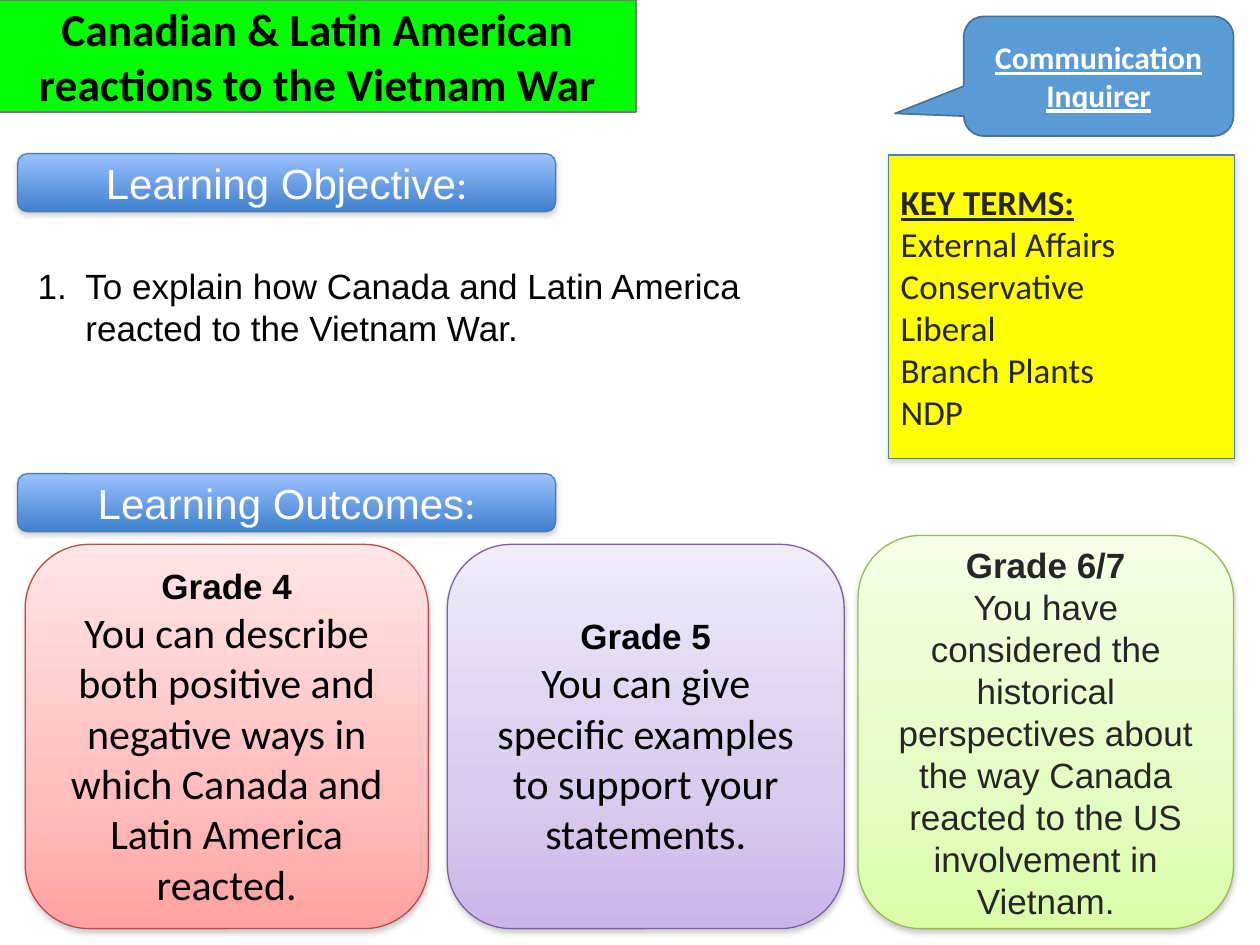
from copy import deepcopy

from lxml.etree import SubElement
from pptx import Presentation
from pptx.dml.color import RGBColor
from pptx.enum.shapes import MSO_SHAPE
from pptx.enum.text import MSO_ANCHOR, MSO_AUTO_SIZE, PP_ALIGN
from pptx.oxml.ns import qn
from pptx.util import Emu, Pt

PX = 9144  # 100 px to the inch

BLACK = RGBColor(0x00, 0x00, 0x00)
WHITE = RGBColor(0xFF, 0xFF, 0xFF)
DARK = RGBColor(0x26, 0x26, 0x26)
GRAY = RGBColor(0x7A, 0x7A, 0x7A)
GREEN = RGBColor(0x00, 0xFF, 0x00)
YELLOW = RGBColor(0xFF, 0xFF, 0x00)
EDGE = RGBColor(0x4A, 0x7E, 0xBB)
SKY = RGBColor(0x5B, 0x9B, 0xD5)
NAVY = RGBColor(0x43, 0x73, 0x9E)
BLUES = [(0, RGBColor(0x9B, 0xC1, 0xFF)), (1, RGBColor(0x3F, 0x80, 0xCD))]
REDS = [(0, RGBColor(0xFF, 0xE5, 0xE5)), (0.65, RGBColor(0xFF, 0xBE, 0xBD)),
        (1, RGBColor(0xFF, 0xA2, 0xA1))]
PURPLES = [(0, RGBColor(0xF0, 0xEA, 0xF9)), (0.65, RGBColor(0xD9, 0xCB, 0xEE)),
           (1, RGBColor(0xC9, 0xB5, 0xE8))]
LIMES = [(0, RGBColor(0xF5, 0xFF, 0xE6)), (0.65, RGBColor(0xE4, 0xFD, 0xC2)),
         (1, RGBColor(0xDA, 0xFD, 0xA7))]
RED_EDGE = RGBColor(0xBE, 0x4B, 0x48)
PURPLE_EDGE = RGBColor(0x7D, 0x60, 0xA0)
LIME_EDGE = RGBColor(0x98, 0xB9, 0x54)


def scale(box):
    return [Emu(n * PX) for n in box]


def paint(shape, fill, edge, width=0.75):
    """Fill with one colour or a list of (place, colour) stops."""
    if isinstance(fill, list):
        shape.fill.gradient()
        shape.fill.gradient_angle = 270
        stops = shape.fill._fill._gradFill.gsLst
        for _ in fill[2:]:
            stops.append(deepcopy(stops[0]))
        for stop, (place, color) in zip(shape.fill.gradient_stops, fill):
            stop.position = place
            stop.color.rgb = color
    else:
        shape.fill.solid()
        shape.fill.fore_color.rgb = fill
    shape.line.color.rgb = edge
    shape.line.width = Pt(width)


def shade(shape, alpha, drop):
    """Cast a soft gray shadow straight down."""
    shape.shadow.inherit = False
    effects = shape._element.spPr.find(qn("a:effectLst"))
    outer = SubElement(effects, qn("a:outerShdw"), blurRad=str(Pt(3.1)),
                       dist=str(Pt(drop)), dir="5400000", rotWithShape="0")
    color = SubElement(outer, qn("a:srgbClr"), val="808080")
    SubElement(color, qn("a:alpha"), val=str(alpha * 1000))


def add_box(slide, kind, box, fill, edge, width=0.75):
    shape = slide.shapes.add_shape(kind, *scale(box))
    shape.shadow.inherit = False
    paint(shape, fill, edge, width)
    shape.text_frame.word_wrap = True
    shape.text_frame.vertical_anchor = MSO_ANCHOR.MIDDLE
    return shape


def style(para, size, name, color, bold=False, line=False,
          align=PP_ALIGN.CENTER):
    para.alignment = align
    font = para.font
    font.size, font.name, font.bold = Pt(size), name, bold
    font.underline = line
    font.color.rgb = color


def write(frame, lines):
    """Write (text, style) pairs, one paragraph each."""
    frame.text = "\n".join(text for text, _ in lines)
    for para, (_, look) in zip(frame.paragraphs, lines):
        style(para, **look)


def add_title(slide, box):
    title = slide.shapes.title
    title.left, title.top, title.width, title.height = scale(box)
    geom = SubElement(title._element.spPr, qn("a:prstGeom"), prst="roundRect")
    SubElement(geom, qn("a:avLst"))
    paint(title, GREEN, GRAY, 1)
    frame = title.text_frame
    frame.auto_size = MSO_AUTO_SIZE.NONE
    frame.vertical_anchor = MSO_ANCHOR.MIDDLE
    text = "Canadian & Latin American reactions to the Vietnam War"
    write(frame, [(text, dict(size=26, name="Calibri", color=BLACK, bold=True))])


def add_callout(slide, box):
    shape = add_box(slide, MSO_SHAPE.ROUNDED_RECTANGULAR_CALLOUT, box, SKY, NAVY, 1)
    shape.adjustments[0], shape.adjustments[1] = -0.755, 0.311
    look = dict(size=18, name="Calibri", color=WHITE, bold=True, line=True)
    write(shape.text_frame, [("Communication", look), ("Inquirer", look)])


def add_banner(slide, box, text):
    shape = add_box(slide, MSO_SHAPE.ROUNDED_RECTANGLE, box, BLUES, EDGE)
    shade(shape, 35, 1.8)
    para = shape.text_frame.paragraphs[0]
    style(para, 24, "Arial", WHITE)
    for part, name in ((text, "Arial"), (":", "Calibri")):
        run = para.add_run()
        run.text, run.font.name = part, name


def add_goal(slide, box, text):
    frame = slide.shapes.add_textbox(*scale(box)).text_frame
    frame.word_wrap = True
    para = frame.paragraphs[0]
    para.text = text
    props = para._p.get_or_add_pPr()
    props.set("marL", str(38 * PX))
    props.set("indent", str(-38 * PX))
    SubElement(props, qn("a:buFont"), typeface="+mj-lt")
    SubElement(props, qn("a:buAutoNum"), type="arabicPeriod")
    style(para, 20, "Arial", BLACK, align=PP_ALIGN.LEFT)


def add_terms(slide, box, terms):
    shape = add_box(slide, MSO_SHAPE.RECTANGLE, box, YELLOW, EDGE)
    shade(shape, 35, 1.8)
    look = dict(size=20, name="Calibri", color=DARK, align=PP_ALIGN.LEFT)
    head = dict(look, bold=True, line=True)
    write(shape.text_frame,
          [("KEY TERMS:", head)] + [(term, look) for term in terms])


def add_card(slide, box, fill, edge, grade, text, size, name, color):
    shape = add_box(slide, MSO_SHAPE.ROUNDED_RECTANGLE, box, fill, edge)
    shade(shape, 38, 1.6)
    write(shape.text_frame, [
        (grade, dict(size=20, name="Arial", color=color, bold=True)),
        (text, dict(size=size, name=name, color=color))])


def main():
    deck = Presentation()
    deck.slide_width, deck.slide_height = scale((1000, 750))
    slide = deck.slides.add_slide(deck.slide_layouts[5])

    # Top row
    add_title(slide, (-1, 0, 506, 89))
    add_callout(slide, (765, 13, 214, 95))

    # Objective and key terms
    add_banner(slide, (14, 122, 427, 46), "Learning Objective")
    add_goal(slide, (20, 205, 661, 77),
             "To explain how Canada and Latin America reacted to the Vietnam War.")
    add_terms(slide, (705, 123, 275, 241),
              ["External Affairs", "Conservative", "Liberal", "Branch Plants", "NDP"])

    # Outcomes by grade
    add_banner(slide, (14, 376, 427, 46), "Learning Outcomes")
    add_card(slide, (20, 432, 320, 305), REDS, RED_EDGE, "Grade 4",
             "You can describe both positive and negative ways in which "
             "Canada and Latin America reacted.", 24, "Calibri", BLACK)
    add_card(slide, (355, 432, 315, 305), PURPLES, PURPLE_EDGE, "Grade 5",
             "You can give specific examples to support your statements.",
             24, "Calibri", BLACK)
    add_card(slide, (681, 425, 298, 312), LIMES, LIME_EDGE, "Grade 6/7",
             "You have considered the historical perspectives about the way "
             "Canada reacted to the US involvement in Vietnam.",
             20, "Arial", DARK)

    deck.save("out.pptx")


if __name__ == "__main__":
    main()
